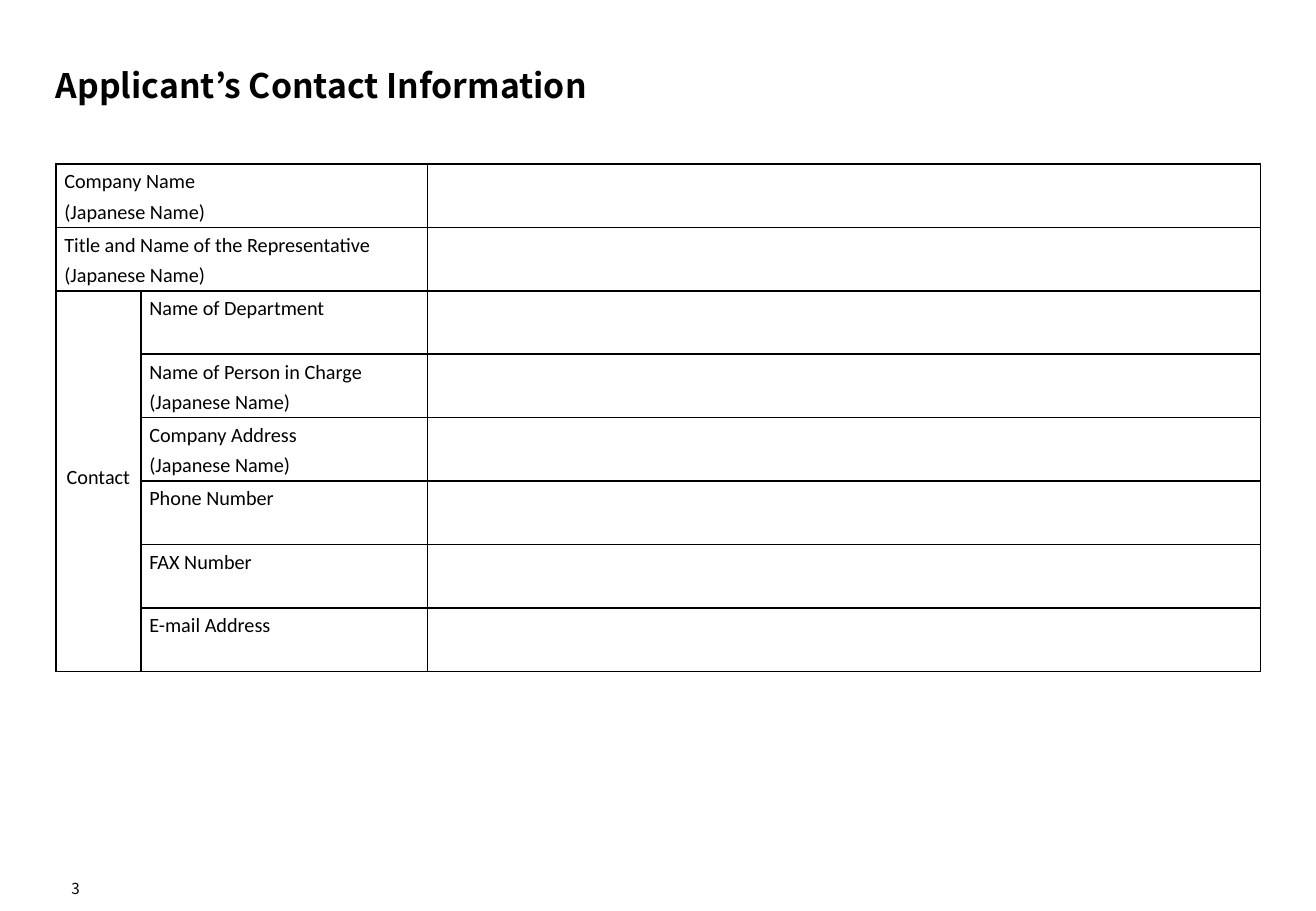
"""Build the applicant's contact information form slide."""
from dataclasses import dataclass
from typing import Any

from lxml.etree import SubElement
from pptx import Presentation
from pptx.dml.color import RGBColor
from pptx.enum.text import MSO_ANCHOR as Anchor, MSO_AUTO_SIZE as AutoSize, PP_ALIGN as Align
from pptx.oxml.ns import qn
from pptx.table import Table, _Cell as Cell
from pptx.util import Pt

COLOURS = {"ink": "000000"}
HEADING_FONT = "Noto Sans CJK JP"
TABLE_FONT = "Calibri"
COLUMN_WIDTHS = (50.4, 170, 493.6)
ROW_HEIGHT = 37.6
HANGING = 10.8
BORDER_WIDTH = 1
JAPANESE = "(Japanese Name)"
NO_INSETS = {"margin_left": 0, "margin_right": 0, "margin_top": 0, "margin_bottom": 0}
CELL_FORMAT = NO_INSETS | {"margin_left": Pt(5), "margin_right": Pt(5)}


@dataclass
class Label:
    row: int
    column: int
    lines: tuple[str, ...]
    last_row: int
    last_column: int
    alignment: Align = Align.JUSTIFY
    anchor: Anchor = Anchor.TOP
    spacing: float = 18


LABELS = [
    Label(0, 0, ("Company Name", JAPANESE), 0, 1),
    Label(1, 0, ("Title and Name of the Representative", JAPANESE), 1, 1, Align.LEFT),
    Label(2, 0, ("Contact",), 7, 0, Align.CENTER, Anchor.MIDDLE, 10),
    Label(2, 1, ("Name of Department",), 2, 1),
    Label(3, 1, ("Name of Person in Charge", JAPANESE), 3, 1),
    Label(4, 1, ("Company Address", JAPANESE), 4, 1),
    Label(5, 1, ("Phone Number",), 5, 1),
    Label(6, 1, ("FAX Number",), 6, 1),
    Label(7, 1, ("E-mail Address",), 7, 1),
]
ROW_COUNT = 8


def apply(target: Any, values: dict[str, Any]) -> None:
    """Set every attribute named in the dict."""
    for name, value in values.items():
        setattr(target, name, value)


def style_font(font: Any, name: str, size: float, bold: bool = False) -> None:
    """Apply typeface, size, weight and ink colour."""
    apply(font, {"name": name, "size": Pt(size), "bold": bold})
    font.color.rgb = RGBColor.from_string(COLOURS["ink"])


def place_text(shape: Any, text: str, box: tuple[float, ...], size: float,
               alignment: Align, bold: bool = False, wrap: bool = True) -> None:
    """Position a text shape and format its single line."""
    apply(shape, dict(zip(("left", "top", "width", "height"), map(Pt, box))))
    apply(shape.text_frame, NO_INSETS | {
        "text": text, "word_wrap": wrap, "auto_size": AutoSize.NONE,
        "vertical_anchor": Anchor.BOTTOM})
    paragraph = shape.text_frame.paragraphs[0]
    paragraph.alignment = alignment
    style_font(paragraph.runs[0].font, HEADING_FONT, size, bold)


def draw_borders(cell: Cell) -> None:
    """Clear the cell fill and rule all four sides."""
    cell.fill.background()
    properties = cell._tc.get_or_add_tcPr()
    for index, side in enumerate(("lnL", "lnR", "lnT", "lnB")):
        line = SubElement(properties, qn(f"a:{side}"), w=str(Pt(BORDER_WIDTH)))
        fill = SubElement(line, qn("a:solidFill"))
        SubElement(fill, qn("a:srgbClr"), val=COLOURS["ink"])
        properties.insert(index, line)


def write_label(table: Table, label: Label) -> None:
    """Merge the label's cells and write its lines."""
    cell = table.cell(label.row, label.column)
    if (label.row, label.column) != (label.last_row, label.last_column):
        cell.merge(table.cell(label.last_row, label.last_column))
    cell.text = "\n".join(label.lines)
    cell.vertical_anchor = label.anchor
    for paragraph in cell.text_frame.paragraphs:
        apply(paragraph, {"alignment": label.alignment, "line_spacing": Pt(label.spacing)})
        properties = paragraph._p.get_or_add_pPr()
        properties.set("marL", str(Pt(HANGING)))
        properties.set("indent", str(-Pt(HANGING)))
        style_font(paragraph.runs[0].font, TABLE_FONT, 12)


def add_form(slide: Any) -> None:
    """Add the ruled contact form."""
    frame = slide.shapes.add_table(
        ROW_COUNT, len(COLUMN_WIDTHS), Pt(33.1), Pt(97.2),
        Pt(sum(COLUMN_WIDTHS)), Pt(ROW_COUNT * ROW_HEIGHT))
    table = frame.table
    apply(table, {"first_row": False, "horz_banding": False})
    for column, width in zip(table.columns, COLUMN_WIDTHS):
        column.width = Pt(width)
    for row in table.rows:
        row.height = Pt(ROW_HEIGHT)
    for cell in table.iter_cells():
        apply(cell, CELL_FORMAT)
        draw_borders(cell)
    for label in LABELS:
        write_label(table, label)


def main() -> None:
    """Create and save the presentation."""
    presentation = Presentation()
    apply(presentation, {"slide_width": Pt(780), "slide_height": Pt(540)})
    slide = presentation.slides.add_slide(presentation.slide_layouts[5])
    place_text(slide.shapes.title, "Applicant’s Contact Information",
               (33.1, 14.4, 714, 48.2), 20, Align.LEFT, bold=True)
    add_form(slide)
    page_number = slide.shapes.add_textbox(0, 0, 0, 0)
    place_text(page_number, "3", (33.1, 518.4, 14.2, 13.7), 9, Align.RIGHT, wrap=False)
    presentation.save("out.pptx")


if __name__ == "__main__":
    main()
